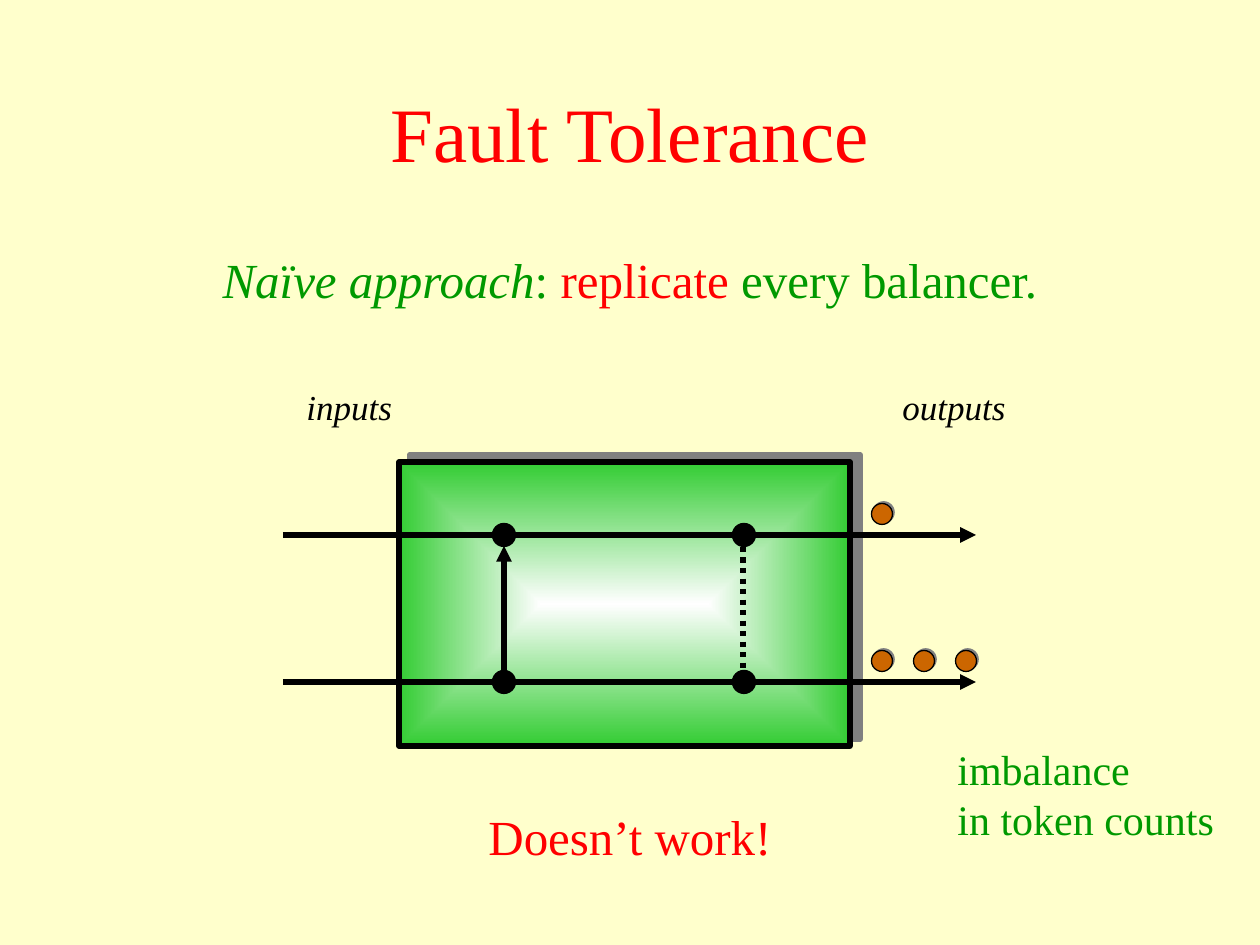
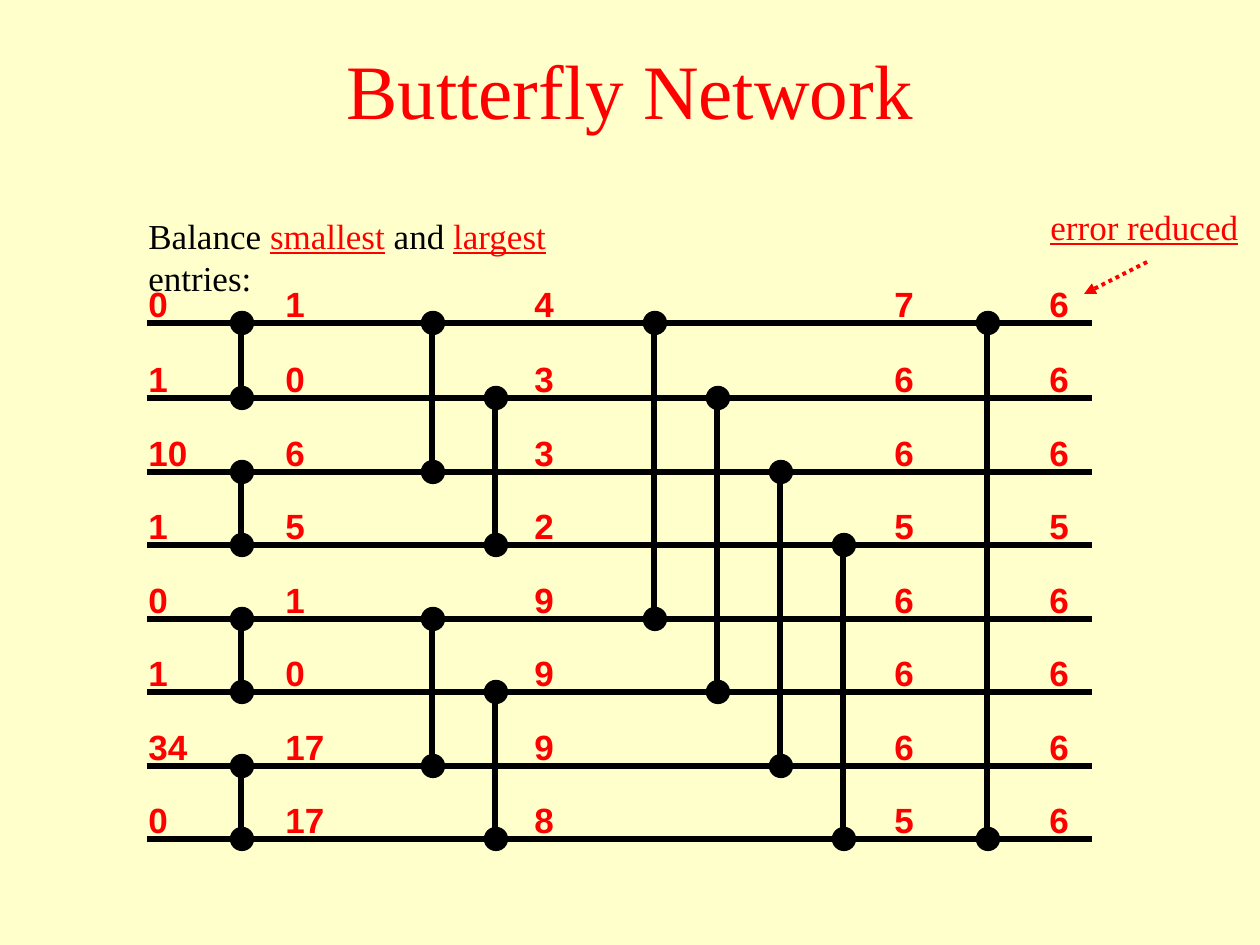
"""Builds two slides on fault tolerance and butterfly networks."""
from lxml.etree import SubElement
from pptx import Presentation
from pptx.dml.color import RGBColor
from pptx.enum.dml import MSO_LINE
from pptx.enum.shapes import MSO_CONNECTOR, MSO_SHAPE
from pptx.enum.text import MSO_ANCHOR, MSO_AUTO_SIZE, PP_ALIGN
from pptx.oxml.ns import qn
from pptx.util import Emu, Pt

SCALE = 914400 / 126
CREAM = RGBColor(0xFF, 0xFF, 0xCC)
RED = RGBColor(0xFF, 0x00, 0x00)
GREEN = RGBColor(0x00, 0x99, 0x00)
BOX_GREEN = RGBColor(0x33, 0xCC, 0x33)
ORANGE = RGBColor(0xCC, 0x66, 0x00)
BLACK = RGBColor(0x00, 0x00, 0x00)
WHITE = RGBColor(0xFF, 0xFF, 0xFF)
SERIF = "Times New Roman"
SANS = "Arial"


def write(page, place, lines, size, font=SERIF, align=PP_ALIGN.LEFT, wrap=False):
    """Add a text box; each line is a list of (text, colour, style) runs."""
    box = page.shapes.add_textbox(*[Emu(round(px * SCALE)) for px in place])
    frame = box.text_frame
    frame.word_wrap = wrap
    frame.auto_size = MSO_AUTO_SIZE.SHAPE_TO_FIT_TEXT
    for number, line in enumerate(lines):
        para = frame.add_paragraph() if number else frame.paragraphs[0]
        para.alignment = align
        for text, color, style in line:
            span = para.add_run()
            span.text = text
            span.font.name = font
            span.font.size = Pt(size)
            span.font.color.rgb = color
            span.font.italic = style == "italic"
            span.font.bold = style == "bold"
            span.font.underline = style == "underline"
    return frame


def draw_line(page, ends, color=BLACK, width=3, dotted=False, arrow=False):
    """Add a straight line between two points, optionally dotted or with an arrowhead."""
    line = page.shapes.add_connector(
        MSO_CONNECTOR.STRAIGHT, *[Emu(round(px * SCALE)) for px in ends])
    line.line.color.rgb = color
    line.line.width = Pt(width)
    if dotted:
        line.line.dash_style = MSO_LINE.ROUND_DOT
    properties = line._element.spPr
    if arrow:
        SubElement(properties.find(qn("a:ln")), qn("a:tailEnd"), type="triangle")
    SubElement(properties, qn("a:effectLst"))


deck = Presentation()
deck.slide_width = Emu(round(1260 * SCALE))
deck.slide_height = Emu(round(945 * SCALE))

pages = []
for title, top in (("Fault Tolerance", 53), ("Butterfly Network", 10)):
    page = deck.slides.add_slide(deck.slide_layouts[6])
    page.background.fill.solid()
    page.background.fill.fore_color.rgb = CREAM
    frame = write(page, (94, top, 1072, 158), [[(title, RED, "")]], 44,
                  align=PP_ALIGN.CENTER, wrap=True)
    frame.auto_size = MSO_AUTO_SIZE.NONE
    frame.vertical_anchor = MSO_ANCHOR.MIDDLE
    pages.append(page)
fault, butterfly = pages

balancer = fault.shapes.add_shape(
    MSO_SHAPE.RECTANGLE, *[Emu(round(px * SCALE)) for px in (399, 462, 451, 284)])
balancer.fill.gradient()
for stop, color in zip(balancer.fill.gradient_stops, (WHITE, BOX_GREEN)):
    stop.color.rgb = color
gradient = balancer._element.spPr.find(qn("a:gradFill"))
gradient.remove(gradient.find(qn("a:lin")))
focus = SubElement(gradient, qn("a:path"), path="shape")
SubElement(focus, qn("a:fillToRect"), l="50000", t="50000", r="50000", b="50000")
balancer.line.color.rgb = BLACK
balancer.line.width = Pt(3)
balancer.shadow.inherit = False
shadowed = [(balancer, 7.2, 326)]

write(fault, (294, 379, 111, 54), [[("inputs", BLACK, "italic")]], 20)
write(fault, (890, 379, 129, 54), [[("outputs", BLACK, "italic")]], 20)
draw_line(fault, (504, 672, 504, 546), arrow=True)
draw_line(fault, (743, 547, 743, 673), dotted=True)
for y in (535, 682):
    draw_line(fault, (283, y, 976, y), arrow=True)

write(fault, (0, 243, 1260, 72),
      [[("Naïve approach", GREEN, "italic"), (": ", GREEN, ""),
        ("replicate", RED, ""), (" every balancer.", GREEN, "")]],
      28, align=PP_ALIGN.CENTER, wrap=True)
write(fault, (945, 737, 282, 113),
      [[("imbalance", GREEN, "")], [("in token counts", GREEN, "")]], 24)
write(fault, (0, 800, 1260, 72), [[("Doesn’t work!", RED, "")]],
      28, align=PP_ALIGN.CENTER, wrap=True)

dots = [(fault, x, y, 23, BLACK) for x in (504, 744) for y in (535, 682)]
dots += [(fault, 882 + 42 * token, y, 21, ORANGE)
         for y, count in ((514, 1), (661, 3)) for token in range(count)]

write(butterfly, (136, 208, 530, 54),
      [[("Balance ", BLACK, ""), ("smallest", RED, "underline"), (" and ", BLACK, ""),
        ("largest", RED, "underline"), (" entries:", BLACK, "")]], 20, wrap=True)

wires = (323, 398, 472, 545, 619, 692, 766, 839)
for y in wires:
    draw_line(butterfly, (147, y, 1092, y))

comparators = [(988, 0, 7)]
for gap, left in ((1, 242), (2, 433), (4, 655)):
    comparators += [(left + 63 * (wire % gap), wire, wire + gap)
                    for wire in range(len(wires)) if not wire & gap]
for x, upper, lower in comparators:
    draw_line(butterfly, (x - 1, wires[upper], x - 1, wires[lower]))
    dots += [(butterfly, x, wires[wire], 23, BLACK) for wire in (upper, lower)]

for page, x, y, size, color in dots:
    dot = page.shapes.add_shape(
        MSO_SHAPE.OVAL,
        *[Emu(round(px * SCALE)) for px in (x - size / 2, y - size / 2, size, size)])
    dot.fill.solid()
    dot.fill.fore_color.rgb = color
    dot.line.color.rgb = BLACK
    dot.line.width = Pt(0.75)
    dot.shadow.inherit = False
    if color == ORANGE:
        shadowed.append((dot, 1.4, 315))

for shape, distance, angle in shadowed:
    effects = shape._element.spPr.find(qn("a:effectLst"))
    shadow = SubElement(effects, qn("a:outerShdw"), dist=str(Pt(distance)),
                        dir=str(angle * 60000), algn="ctr", rotWithShape="0")
    SubElement(shadow, qn("a:srgbClr"), val="808080")

counts = {
    136: (0, 1, 10, 1, 0, 1, 34, 0),
    273: (1, 0, 6, 5, 1, 0, 17, 17),
    522: (4, 3, 3, 2, 9, 9, 9, 8),
    882: (7, 6, 6, 5, 6, 6, 6, 5),
    1037: (6, 6, 6, 5, 6, 6, 6, 6),
}
for x, column in counts.items():
    for y, count in zip(wires, column):
        width = 45 if count < 10 else 64
        write(butterfly, (x, y - 47, width, 54), [[(str(count), RED, "bold")]], 20, SANS)

write(butterfly, (1038, 199, 222, 54),
      [[("error reduced", RED, "underline"), (" ", RED, "")]], 20)
draw_line(butterfly, (1147, 262, 1084, 294), RED, 2.25, dotted=True, arrow=True)

deck.save("out.pptx")
